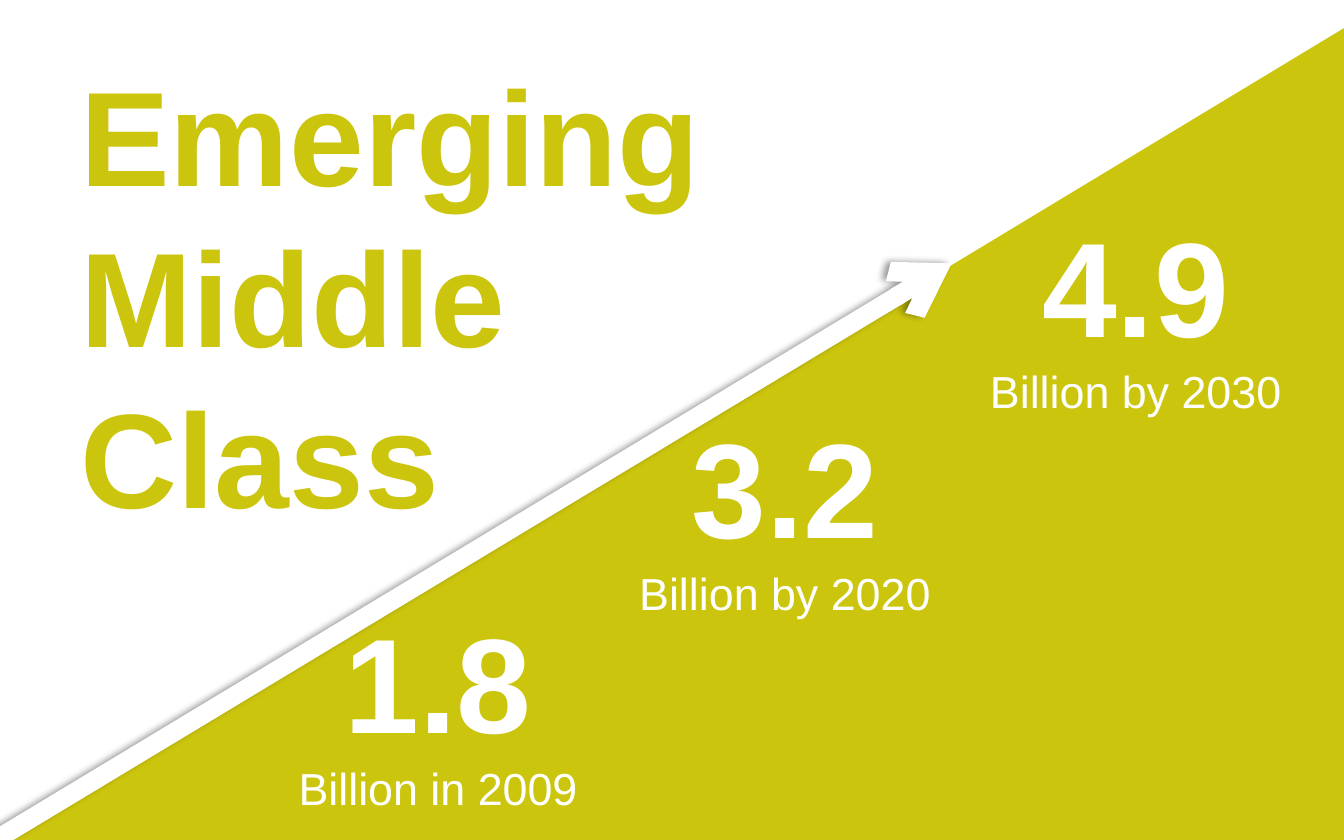
"""Build a one-page slide on the growth of the emerging middle class."""
from dataclasses import dataclass

from lxml.etree import SubElement
from pptx import Presentation
from pptx.dml.color import RGBColor
from pptx.enum.shapes import MSO_CONNECTOR
from pptx.enum.text import MSO_ANCHOR, MSO_AUTO_SIZE, PP_ALIGN
from pptx.oxml.ns import qn
from pptx.util import Inches, Pt


@dataclass(frozen=True)
class Theme:
    font: str = "Arial"
    olive: RGBColor = RGBColor(0xCC, 0xC5, 0x0E)
    white: RGBColor = RGBColor(0xFF, 0xFF, 0xFF)
    large: Pt = Pt(72)
    small: Pt = Pt(24)
    arrow: Pt = Pt(10)


theme = Theme()


def style(para, size, color, bold):
    para.font.name = theme.font
    para.font.size = size
    para.font.bold = bold
    para.font.color.rgb = color


deck = Presentation()
deck.slide_width = Inches(10)
deck.slide_height = Inches(6.25)
page = deck.slides.add_slide(deck.slide_layouts[6])

builder = page.shapes.build_freeform(Inches(10), Inches(6.25))
builder.add_line_segments(
    [(Inches(10), Inches(0.21)), (Inches(0), Inches(6.25))], close=True
)
slope = builder.convert_to_shape()
slope.shadow.inherit = False
slope.fill.solid()
slope.fill.fore_color.rgb = theme.olive
slope.line.fill.background()

title = page.shapes.add_textbox(Inches(0.5), Inches(0.25), Inches(9), Inches(3.87))
title.text_frame.word_wrap = True
title.text_frame.vertical_anchor = MSO_ANCHOR.MIDDLE
heading = title.text_frame.paragraphs[0]
heading.text = "Emerging\vMiddle\vClass"
style(heading, theme.large, theme.olive, True)

milestones = [
    (2.11, 4.41, 2.3, "1.8", "Billion in 2009"),
    (4.64, 2.96, 2.4, "3.2", "Billion by 2020"),
    (7.25, 1.46, 2.4, "4.9", "Billion by 2030"),
]
for left, top, width, figure, caption in milestones:
    box = page.shapes.add_textbox(
        Inches(left), Inches(top), Inches(width), Inches(1.72)
    )
    frame = box.text_frame
    frame.word_wrap = False
    frame.auto_size = MSO_AUTO_SIZE.SHAPE_TO_FIT_TEXT
    frame.text = f"{figure}\n{caption}"
    for para, size, bold in zip(
        frame.paragraphs, (theme.large, theme.small), (True, False)
    ):
        para.alignment = PP_ALIGN.CENTER
        style(para, size, theme.white, bold)

arrow = page.shapes.add_connector(
    MSO_CONNECTOR.STRAIGHT, Inches(-0.25), Inches(6.38), Inches(7.08), Inches(1.96)
)
arrow.line.color.rgb = theme.white
arrow.line.width = theme.arrow
properties = arrow.element.spPr
SubElement(properties.find(qn("a:ln")), qn("a:tailEnd"), type="arrow")
effects = SubElement(properties, qn("a:effectLst"))
shadow = SubElement(
    effects,
    qn("a:outerShdw"),
    blurRad=str(Pt(4)),
    dist=str(Pt(3)),
    dir=str(180 * 60000),
    rotWithShape="0",
)
shade = SubElement(shadow, qn("a:srgbClr"), val="000000")
SubElement(shade, qn("a:alpha"), val="40000")

deck.save("out.pptx")
